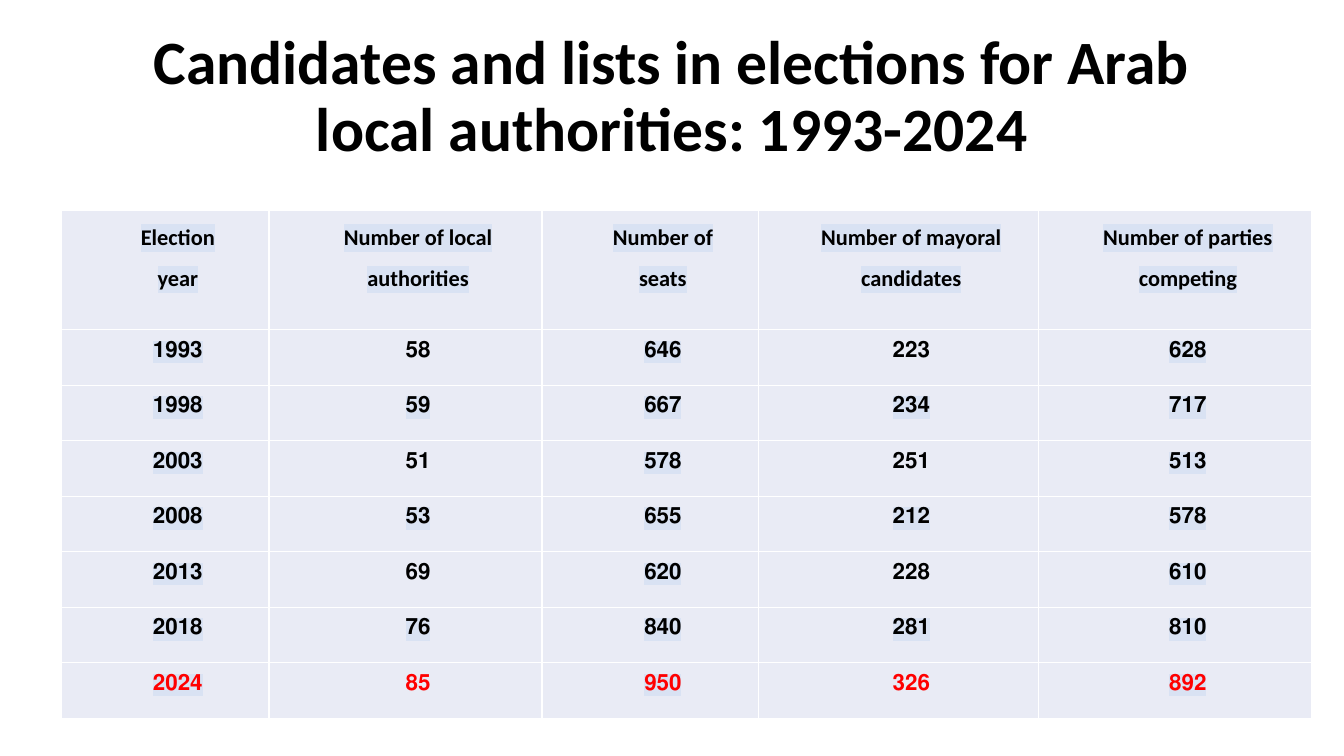
import pptx
import pptx.dml.color
import pptx.enum.text
import pptx.oxml.ns
import pptx.util
from lxml import etree
from pptx.util import Cm

BLACK = pptx.dml.color.RGBColor(0x00, 0x00, 0x00)
RED = pptx.dml.color.RGBColor(0xFF, 0x00, 0x00)
WHITE = pptx.dml.color.RGBColor(0xFF, 0xFF, 0xFF)
CELL_FILL = pptx.dml.color.RGBColor(0xE9, 0xEB, 0xF5)
HIGHLIGHT = pptx.dml.color.RGBColor(0xD9, 0xE2, 0xF3)

TITLE = "Candidates and lists in elections for Arab local authorities: 1993-2024"
HEADINGS = ("Election year", "Number of local authorities", "Number of seats",
            "Number of mayoral candidates", "Number of parties competing")
ELECTIONS = (
    (1993, 58, 646, 223, 628),
    (1998, 59, 667, 234, 717),
    (2003, 51, 578, 251, 513),
    (2008, 53, 655, 212, 578),
    (2013, 69, 620, 228, 610),
    (2018, 76, 840, 281, 810),
    (2024, 85, 950, 326, 892),
)
COLUMN_WIDTHS = (5.23, 6.88, 5.46, 7.06, 6.88)
HEADER_HEIGHT, ROW_HEIGHT = 3, 1.4


def add_xml(parent, tag, **attributes):
    return etree.SubElement(parent, pptx.oxml.ns.qn(tag), attributes)


class SlideBuilder:
    font = "Calibri"
    digit_font = "Helvetica"

    def __init__(self, deck):
        self.page = deck.slides.add_slide(deck.slide_layouts[5])

    def format_para(self, para, size, color, spacing, script_font, highlight=None):
        para.alignment = pptx.enum.text.PP_ALIGN.CENTER
        para.line_spacing = spacing
        para._p.get_or_add_pPr().set("rtl", "1")
        for span in para.runs:
            font = span.font
            font.size, font.bold = pptx.util.Pt(size), True
            font.color.rgb = color
            if highlight is not None:
                mark = add_xml(font._element, "a:highlight")
                add_xml(mark, "a:srgbClr", val=str(highlight))
            font.name = self.font
            add_xml(font._element, "a:cs", typeface=script_font)

    def title(self, text, left, top, width, height):
        box = self.page.shapes.title
        box.left, box.top, box.width, box.height = map(Cm, (left, top, width, height))
        frame = box.text_frame
        frame.text = text
        frame.word_wrap = True
        frame.vertical_anchor = pptx.enum.text.MSO_ANCHOR.MIDDLE
        self.format_para(frame.paragraphs[0], 44, BLACK, 0.9, self.font)

    def cell(self, cell, text, color, highlight):
        cell.margin_left = cell.margin_right = Cm(0.18)
        cell.margin_top = cell.margin_bottom = 0
        # Borders come before the fill
        for side in ("a:lnL", "a:lnR", "a:lnT", "a:lnB"):
            line = add_xml(cell._tc.get_or_add_tcPr(), side, w=str(pptx.util.Pt(1)))
            add_xml(add_xml(line, "a:solidFill"), "a:srgbClr", val=str(WHITE))
        cell.fill.solid()
        cell.fill.fore_color.rgb = CELL_FILL
        para = cell.text_frame.paragraphs[0]
        para.text = text
        self.format_para(para, 16, color, 1.5, self.digit_font, highlight)
        # The wider indent at the line end wraps the headings
        settings = para._p.get_or_add_pPr()
        settings.set("marL", str(Cm(0.64)))
        settings.set("marR", str(Cm(1.27)))
        settings.set("indent", "0")

    def table(self, rows, left, top, widths, heights):
        frame = self.page.shapes.add_table(len(rows), len(widths), Cm(left), Cm(top),
                                           Cm(sum(widths)), Cm(sum(heights)))
        table = frame.table
        table.first_row = table.horz_banding = False
        for column, width in zip(table.columns, widths):
            column.width = Cm(width)
        for row, height in zip(table.rows, heights):
            row.height = Cm(height)
        for r, values in enumerate(rows):
            color = RED if r == len(rows) - 1 else BLACK
            for c, value in enumerate(values):
                # Odd rows leave the second and fourth columns unmarked
                highlight = None if r % 2 and c % 2 else HIGHLIGHT
                self.cell(table.cell(r, c), str(value), color, highlight)


def main():
    deck = pptx.Presentation()
    deck.slide_width, deck.slide_height = Cm(33.87), Cm(19.05)
    slide = SlideBuilder(deck)

    # Title
    slide.title(TITLE, 2.34, 0.23, 29.21, 4.47)

    # Election figures
    heights = (HEADER_HEIGHT,) + (ROW_HEIGHT,) * len(ELECTIONS)
    slide.table((HEADINGS,) + ELECTIONS, 1.55, 5.31, COLUMN_WIDTHS, heights)

    deck.save("out.pptx")


if __name__ == "__main__":
    main()
